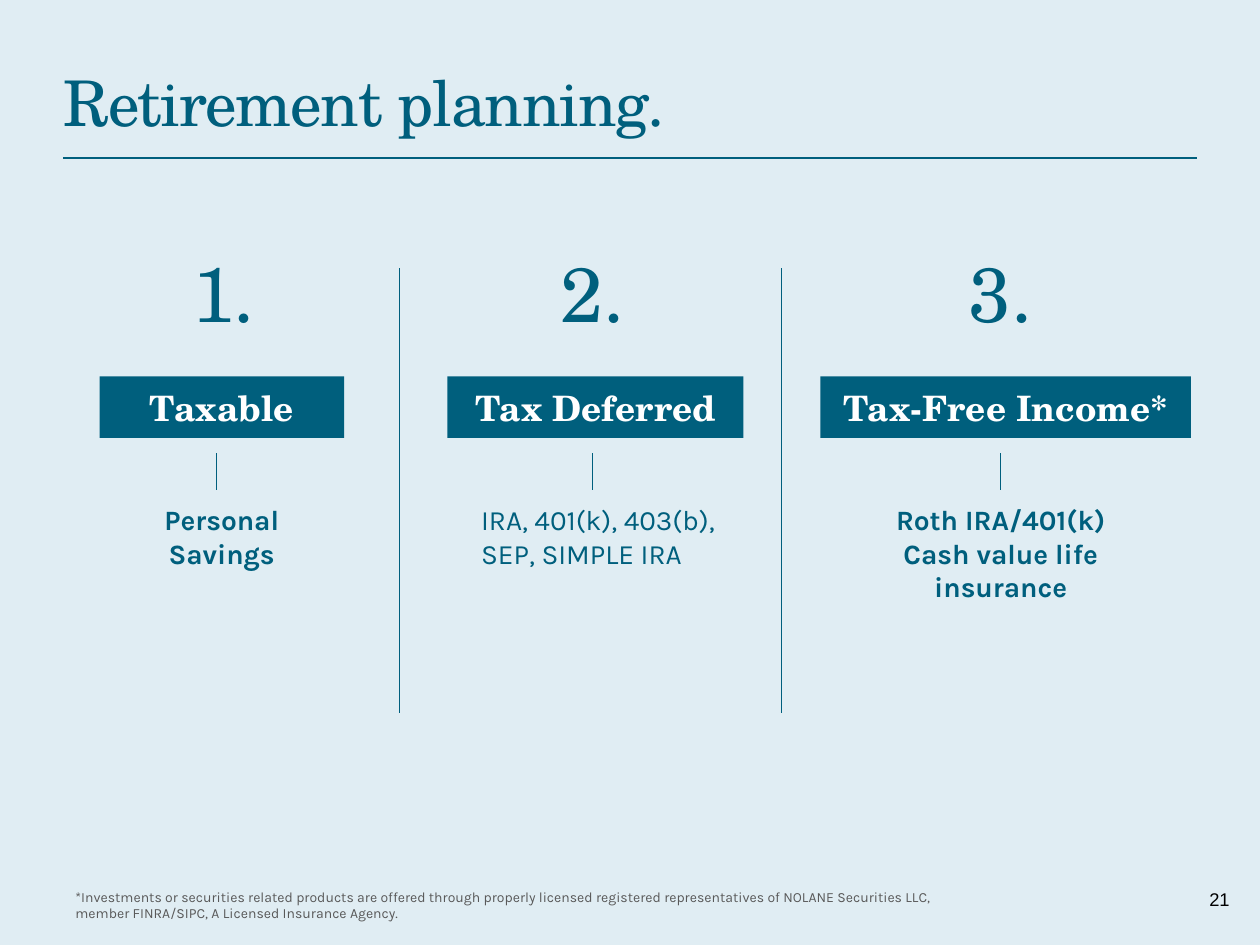
"""Build the retirement planning slide with three tax categories."""
from dataclasses import dataclass

from lxml import etree
from pptx import Presentation
from pptx.dml.color import RGBColor
from pptx.enum.shapes import MSO_CONNECTOR, MSO_SHAPE
from pptx.enum.text import MSO_ANCHOR, MSO_AUTO_SIZE, PP_ALIGN
from pptx.oxml.ns import qn
from pptx.slide import Slide
from pptx.text.text import TextFrame
from pptx.util import Cm, Pt

STRAIGHT = MSO_CONNECTOR.STRAIGHT
RECTANGLE = MSO_SHAPE.RECTANGLE
TOP, MIDDLE = MSO_ANCHOR.TOP, MSO_ANCHOR.MIDDLE
LEFT, CENTER = PP_ALIGN.LEFT, PP_ALIGN.CENTER
NO_AUTOFIT = MSO_AUTO_SIZE.NONE

COLORS = {
    "background": "E0EDF3",
    "teal": "005F7D",
    "white": "FFFFFF",
    "gray": "595959",
    "black": "000000",
}
SERIF, SANS, PLAIN = "TeX Gyre Schola", "Karla", "Arial"


@dataclass(frozen=True)
class TextStyle:
    font: str
    size: float
    color: str = "teal"
    bold: bool = False
    align: PP_ALIGN = LEFT


@dataclass(frozen=True)
class Category:
    number: str
    number_left: float
    label: str
    bar_left: float
    bar_width: float
    stem_x: float
    details: str
    details_left: float
    details_width: float
    details_height: float
    details_style: TextStyle


TITLE = TextStyle(SERIF, 36)
NUMBER = TextStyle(SERIF, 44)
LABEL = TextStyle(SERIF, 20, "white", True, CENTER)
DETAILS = TextStyle(SANS, 16)
STRONG_DETAILS = TextStyle(SANS, 16, bold=True, align=CENTER)
FOOTNOTE = TextStyle(SANS, 8, "gray")
PAGE_NUMBER = TextStyle(PLAIN, 10.5, "black")

CATEGORIES = [
    Category("1.", 3.63, "Taxable", 2.01, 4.93, 4.37,
             "Personal Savings", 2.49, 3.96, 1.5, STRONG_DETAILS),
    Category("2.", 11.05, "Tax Deferred", 9.02, 5.97, 11.94,
             "IRA, 401(k), 403(b), SEP, SIMPLE IRA", 9.45, 5.69, 1.5, DETAILS),
    Category("3.", 19.28, "Tax-Free Income*", 16.54, 7.47, 20.17,
             "Roth IRA/401(k)\nCash value life insurance",
             16.81, 6.73, 2.18, STRONG_DETAILS),
]
DIVIDERS = [8.05, 15.75]
DISCLOSURE = (
    "*Investments or securities related products are offered through properly "
    "licensed registered representatives of NOLANE Securities LLC, member "
    "FINRA/SIPC, A Licensed Insurance Agency."
)


def rgb(name: str) -> RGBColor:
    return RGBColor.from_string(COLORS[name])


def write(frame: TextFrame, text: str, style: TextStyle) -> None:
    frame.text = text
    frame.word_wrap = True
    for paragraph in frame.paragraphs:
        paragraph.alignment = style.align
        for run in paragraph.runs:
            run.font.name = style.font
            run.font.size = Pt(style.size)
            run.font.bold = style.bold
            run.font.color.rgb = rgb(style.color)


def add_text(slide: Slide, left: float, top: float, width: float, height: float,
             text: str, style: TextStyle) -> TextFrame:
    frame = slide.shapes.add_textbox(Cm(left), Cm(top), Cm(width), Cm(height)).text_frame
    write(frame, text, style)
    return frame


def add_line(slide: Slide, x1: float, y1: float, x2: float, y2: float,
             weight: float = 0.75) -> None:
    line = slide.shapes.add_connector(STRAIGHT, Cm(x1), Cm(y1), Cm(x2), Cm(y2))
    line.line.color.rgb = rgb("teal")
    line.line.width = Pt(weight)
    etree.SubElement(line._element.spPr, qn("a:effectLst"))


def add_title(slide: Slide, text: str) -> None:
    title = slide.shapes.title
    title.left, title.top, title.width, title.height = Cm(1.27), Cm(1.27), Cm(14.73), Cm(1.32)
    frame = title.text_frame
    frame.margin_left = frame.margin_top = frame.margin_right = frame.margin_bottom = 0
    frame.vertical_anchor = TOP
    frame.auto_size = NO_AUTOFIT
    write(frame, text, TITLE)
    frame.paragraphs[0].runs[0].font._element.set("spc", "-70")


def add_category(slide: Slide, category: Category) -> None:
    add_text(slide, category.number_left, 4.83, 3.78, 2.13, category.number, NUMBER)
    bar = slide.shapes.add_shape(
        RECTANGLE, Cm(category.bar_left), Cm(7.59), Cm(category.bar_width), Cm(1.24))
    bar.shadow.inherit = False
    bar.fill.solid()
    bar.fill.fore_color.rgb = rgb("teal")
    bar.line.fill.background()
    bar.text_frame.vertical_anchor = MIDDLE
    write(bar.text_frame, category.label, LABEL)
    add_line(slide, category.stem_x, 9.14, category.stem_x, 9.88)
    details = add_text(slide, category.details_left, 10.13, category.details_width,
                       category.details_height, category.details, category.details_style)
    details.margin_top = 0


def main() -> None:
    presentation = Presentation()
    presentation.slide_width, presentation.slide_height = Cm(25.4), Cm(19.05)
    slide = presentation.slides.add_slide(presentation.slide_layouts.get_by_name("Title Only"))
    slide.background.fill.solid()
    slide.background.fill.fore_color.rgb = rgb("background")

    add_title(slide, "Retirement planning.")
    add_line(slide, 1.27, 3.18, 24.13, 3.18, 1)
    for x in DIVIDERS:
        add_line(slide, x, 5.41, x, 14.38)
    for category in CATEGORIES:
        add_category(slide, category)
    add_text(slide, 1.27, 17.78, 18.01, 0.94, DISCLOSURE, FOOTNOTE)
    add_text(slide, 24.13, 17.78, 1.17, 0.71, "21", PAGE_NUMBER)
    presentation.save("out.pptx")


if __name__ == "__main__":
    main()
